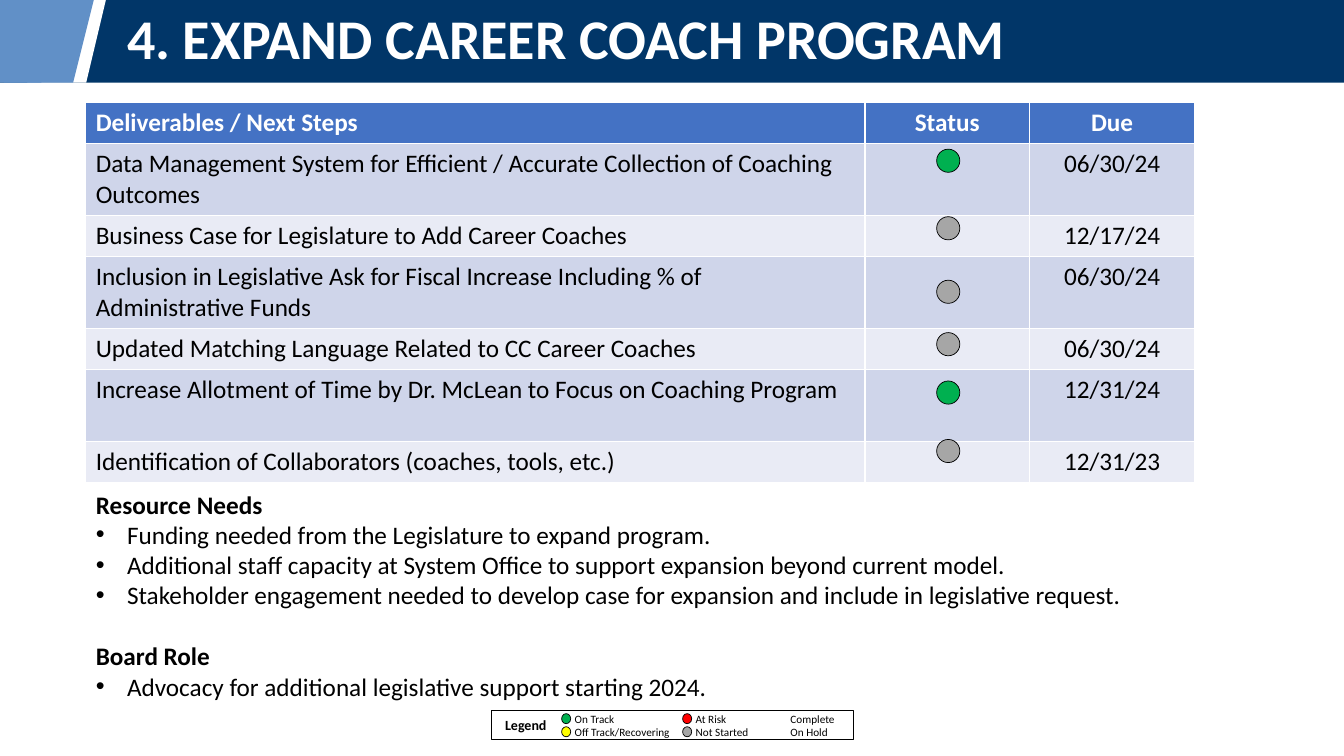
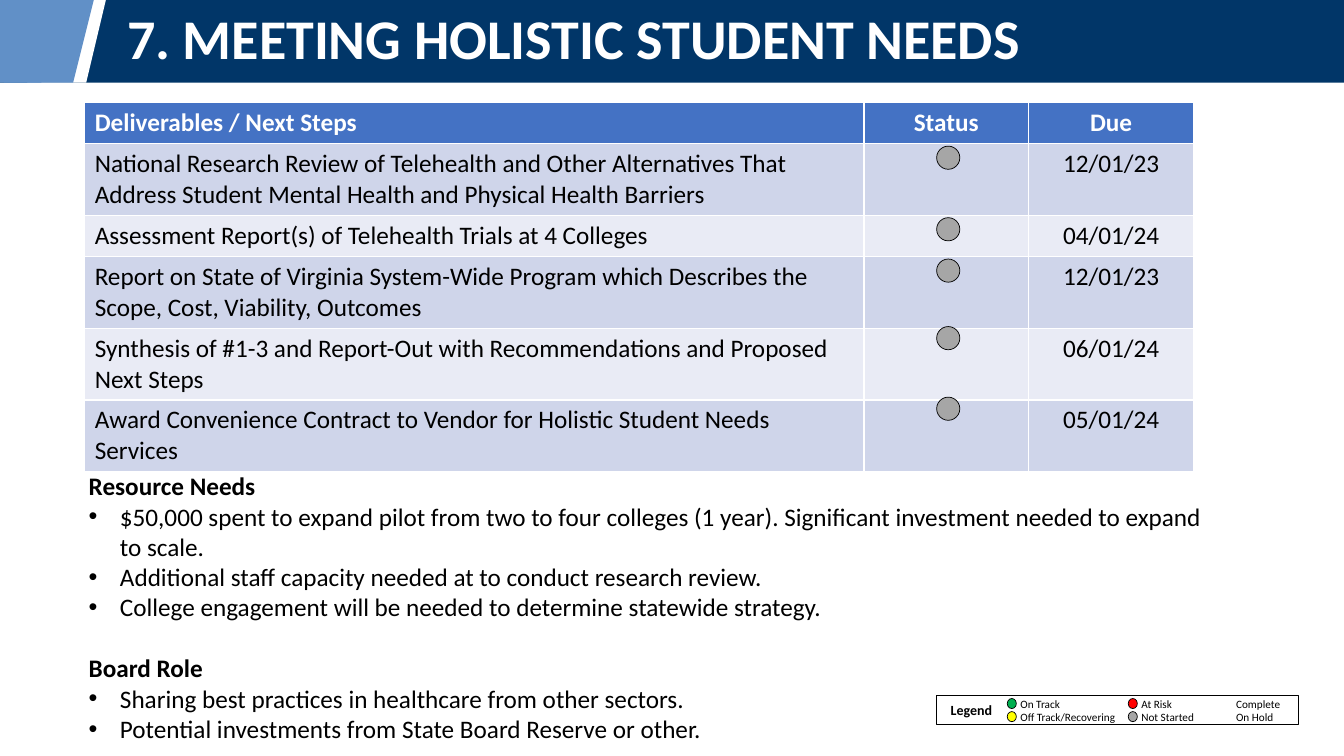
from dataclasses import dataclass

from lxml import etree
from pptx import Presentation
from pptx.dml.color import RGBColor
from pptx.enum.shapes import MSO_SHAPE
from pptx.enum.text import MSO_ANCHOR, MSO_AUTO_SIZE, PP_ALIGN
from pptx.oxml.ns import qn
from pptx.util import Inches, Pt

RECT, OVAL, SLANT = MSO_SHAPE.RECTANGLE, MSO_SHAPE.OVAL, MSO_SHAPE.PARALLELOGRAM
LEFT, CENTER = PP_ALIGN.LEFT, PP_ALIGN.CENTER
TOP, MIDDLE = MSO_ANCHOR.TOP, MSO_ANCHOR.MIDDLE
NO_FIT = MSO_AUTO_SIZE.NONE


@dataclass(frozen=True)
class Theme:
    font: str = "Calibri"
    black: str = "000000"
    white: str = "FFFFFF"
    navy: str = "013668"
    sky: str = "6190C7"
    head: str = "4472C4"
    bands: tuple = ("CFD5EA", "E9EBF5")
    green: str = "00B050"
    gray: str = "A6A6A6"
    yellow: str = "FFFF00"
    red: str = "FF0000"
    title: int = 40
    body: int = 18
    key: int = 10
    label: int = 8


THEME = Theme()
WIDTH, HEIGHT, BAND = 13.33, 7.5, 0.82
COLUMNS = (7.73, 1.63, 1.64)
HEADS = ("Deliverables / Next Steps", "Status", "Due")
HEAD_ROW, ONE_LINE, LINE = 0.4, 0.41, 0.3
DOT, DOT_LEFT = 0.23, 9.29
INDENT = 0.31

# Label, dot colour, column and row of each legend entry
LEGEND = (
    ("On Track", THEME.green, 0, 0),
    ("Off Track/Recovering", THEME.yellow, 0, 1),
    ("At Risk", THEME.red, 1, 0),
    ("Not Started", THEME.gray, 1, 1),
    ("Complete", None, 2, 0),
    ("On Hold", None, 2, 1),
)

# Rows hold: step, due date, lines of height, dot colour, dot top
PAGES = (
    {
        "title": "4. EXPAND CAREER COACH PROGRAM",
        "table": (0.85, 1.02),
        "rows": (
            ("Data Management System for Efficient / Accurate Collection of Coaching Outcomes",
             "06/30/24", 2, THEME.green, 1.48),
            ("Business Case for Legislature to Add Career Coaches",
             "12/17/24", 1, THEME.gray, 2.15),
            ("Inclusion in Legislative Ask for Fiscal Increase Including % of Administrative Funds",
             "06/30/24", 2, THEME.gray, 2.78),
            ("Updated Matching Language Related to CC Career Coaches",
             "06/30/24", 1, THEME.gray, 3.3),
            ("Increase Allotment of Time by Dr. McLean to Focus on Coaching Program",
             "12/31/24", 2, THEME.green, 3.78),
            ("Identification of Collaborators (coaches, tools, etc.)",
             "12/31/23", 1, THEME.gray, 4.36),
        ),
        "body": (0.85, 4.8, 11.19, 2.22),
        "notes": (
            ("Resource Needs", (
                "Funding needed from the Legislature to expand program.",
                "Additional staff capacity at System Office to support expansion beyond current model.",
                "Stakeholder engagement needed to develop case for expansion and include in "
                "legislative request.",
            )),
            ("Board Role", ("Advocacy for additional legislative support starting 2024.",)),
        ),
        "legend": (4.87, 7.05),
    },
    {
        "title": "7. MEETING HOLISTIC STUDENT NEEDS",
        "table": (0.84, 1.02),
        "rows": (
            ("National Research Review of Telehealth and Other Alternatives That Address "
             "Student Mental Health and Physical Health Barriers",
             "12/01/23", 2, THEME.gray, 1.45),
            ("Assessment Report(s) of Telehealth Trials at 4 Colleges",
             "04/01/24", 1, THEME.gray, 2.16),
            ("Report on State of Virginia System-Wide Program which Describes the Scope, "
             "Cost, Viability, Outcomes",
             "12/01/23", 2, THEME.gray, 2.57),
            ("Synthesis of #1-3 and Report-Out with Recommendations and Proposed Next Steps",
             "06/01/24", 2, THEME.gray, 3.24),
            ("Award Convenience Contract to Vendor for Holistic Student Needs Services",
             "05/01/24", 2, THEME.gray, 3.94),
        ),
        "body": (0.78, 4.62, 11.4, 2.83),
        "notes": (
            ("Resource Needs", (
                "$50,000 spent to expand pilot from two to four colleges (1 year). "
                "Significant investment needed to expand to scale.",
                "Additional staff capacity needed at to conduct research review.",
                "College engagement will be needed to determine statewide strategy.",
            )),
            ("Board Role", (
                "Sharing best practices in healthcare from other sectors.",
                "Potential investments from State Board Reserve or other.",
            )),
        ),
        "legend": (9.29, 6.9),
    },
)


def style(para, size, color=THEME.black, bold=False, align=LEFT):
    para.alignment = align
    font = para.font
    font.name, font.size, font.bold = THEME.font, Pt(size), bold
    font.color.rgb = RGBColor.from_string(color)


def place(shape, left, top, width, height):
    shape.left, shape.top = Inches(left), Inches(top)
    shape.width, shape.height = Inches(width), Inches(height)


def add_form(shapes, kind, box, fill, line=None):
    form = shapes.add_shape(kind, *map(Inches, box))
    form.shadow.inherit = False
    form.fill.solid()
    form.fill.fore_color.rgb = RGBColor.from_string(fill)
    if line:
        form.line.color.rgb = RGBColor.from_string(line)
        form.line.width = Pt(0.5)
    else:
        form.line.fill.background()


def add_label(shapes, text, box, size, bold=False):
    frame = shapes.add_textbox(*map(Inches, box)).text_frame
    frame.word_wrap = True
    frame.vertical_anchor = MIDDLE
    frame.margin_left = frame.margin_right = 0
    frame.margin_top = frame.margin_bottom = 0
    frame.text = text
    style(frame.paragraphs[0], size, bold=bold)


def add_title(slide, text):
    """Draw the top band and set the title over it."""
    add_form(slide.shapes, RECT, (0, 0, WIDTH, BAND), THEME.navy)
    group = slide.shapes.add_group_shape().shapes
    add_form(group, SLANT, (0.27, 0, 0.78, BAND), THEME.white)
    add_form(group, SLANT, (0.04, 0, 0.89, BAND), THEME.sky)
    add_form(group, RECT, (0, 0, 0.41, BAND), THEME.sky)

    title = slide.shapes.title
    place(title, 1.16, 0, 11.9, BAND)
    title.element.getparent().append(title.element)
    frame = title.text_frame
    frame.text = text
    frame.auto_size = NO_FIT
    frame.vertical_anchor = MIDDLE
    para = frame.paragraphs[0]
    para.line_spacing = 0.9
    style(para, THEME.title, THEME.white, True)


def add_steps(slide, spot, rows):
    """Add the table of steps and the status dots over it."""
    heights = [HEAD_ROW] + [ONE_LINE + LINE * (row[2] - 1) for row in rows]
    frame = slide.shapes.add_table(
        len(heights), len(COLUMNS), *map(Inches, (*spot, sum(COLUMNS), sum(heights))))
    table = frame.table
    for column, width in zip(table.columns, COLUMNS):
        column.width = Inches(width)
    lines = [HEADS] + [(step, "", due) for step, due, *_ in rows]
    for i, (height, texts) in enumerate(zip(heights, lines)):
        table.rows[i].height = Inches(height)
        head = i == 0
        fill = THEME.head if head else THEME.bands[(i - 1) % 2]
        for j, text in enumerate(texts):
            cell = table.cell(i, j)
            cell.fill.solid()
            cell.fill.fore_color.rgb = RGBColor.from_string(fill)
            cell.text = text
            style(cell.text_frame.paragraphs[0], THEME.body,
                  THEME.white if head else THEME.black, head, CENTER if j else LEFT)
    for *_, color, top in rows:
        add_form(slide.shapes, OVAL, (DOT_LEFT, top, DOT, DOT), color, THEME.black)


def set_bullet(para, shown):
    props = para._p.get_or_add_pPr()
    indent = Inches(INDENT) if shown else 0
    props.set("marL", str(indent))
    props.set("indent", str(-indent))
    if shown:
        etree.SubElement(props, qn("a:buFont")).set("typeface", "Arial")
        etree.SubElement(props, qn("a:buChar")).set("char", "•")
    else:
        etree.SubElement(props, qn("a:buNone"))


def fill_body(slide, box, notes):
    body = slide.placeholders[1]
    place(body, *box)
    frame = body.text_frame
    frame.auto_size = NO_FIT
    frame.vertical_anchor = TOP
    lines = [(text, text == head) for head, items in notes for text in (head, *items)]
    for i, (text, head) in enumerate(lines):
        para = frame.add_paragraph() if i else frame.paragraphs[0]
        para.text = text
        set_bullet(para, not head)
        para.space_before = Pt(22 if head and i else 0)
        style(para, THEME.body, bold=head)


def add_legend(slide, left, top):
    shapes = slide.shapes.add_group_shape().shapes
    add_form(shapes, RECT, (left, top, 3.59, 0.29), THEME.white, THEME.black)
    add_label(shapes, "Legend", (left + 0.14, top + 0.01, 0.5, 0.27), THEME.key, True)
    for text, color, column, row in LEGEND:
        x = left + (0.7, 1.9, 2.84)[column]
        middle = top + 0.08 + 0.13 * row
        if color:
            add_form(shapes, OVAL, (x, middle - 0.05, 0.09, 0.1), color, THEME.black)
        add_label(shapes, text, (x + 0.13, middle - 0.06, 1.05 if column == 0 else 0.6, 0.12),
                  THEME.label)


def main():
    deck = Presentation()
    deck.slide_width, deck.slide_height = Inches(WIDTH), Inches(HEIGHT)
    for page in PAGES:
        slide = deck.slides.add_slide(deck.slide_layouts[1])
        add_title(slide, page["title"])
        add_steps(slide, page["table"], page["rows"])
        fill_body(slide, page["body"], page["notes"])
        add_legend(slide, *page["legend"])
    deck.save("out.pptx")


if __name__ == "__main__":
    main()
